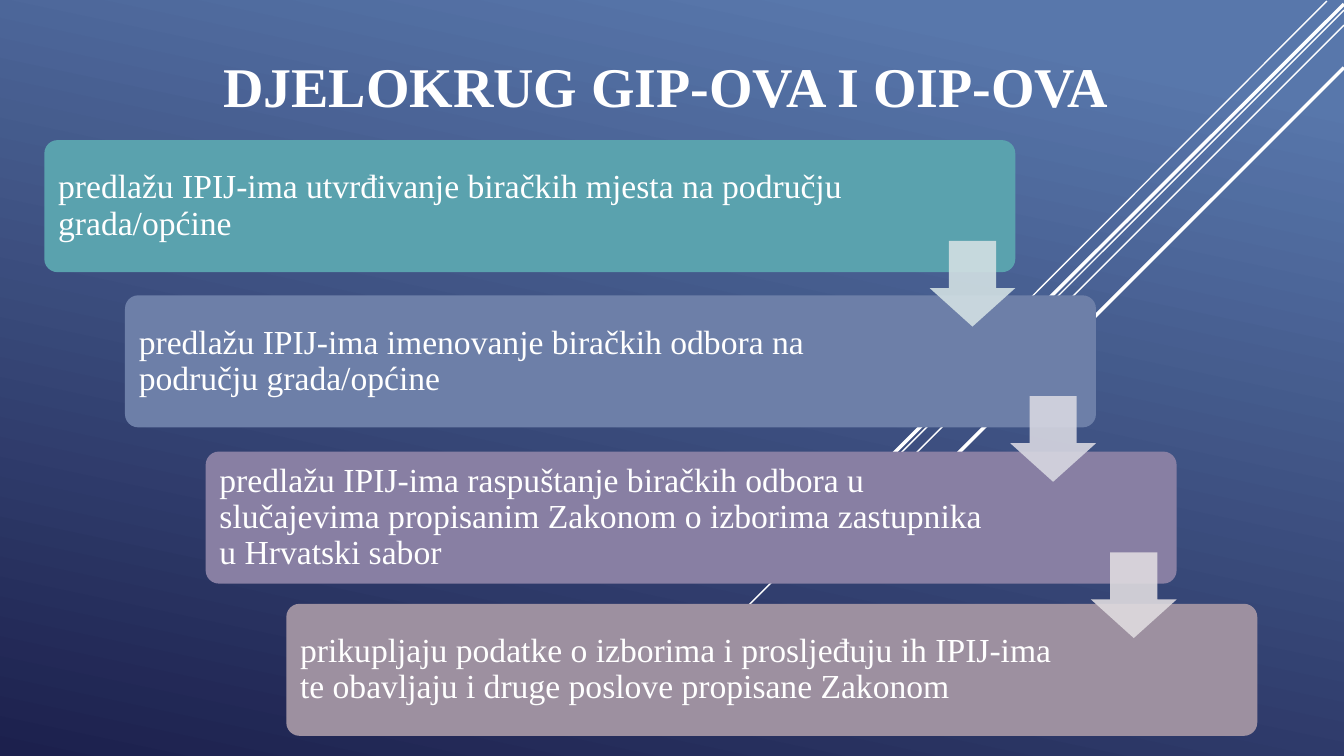
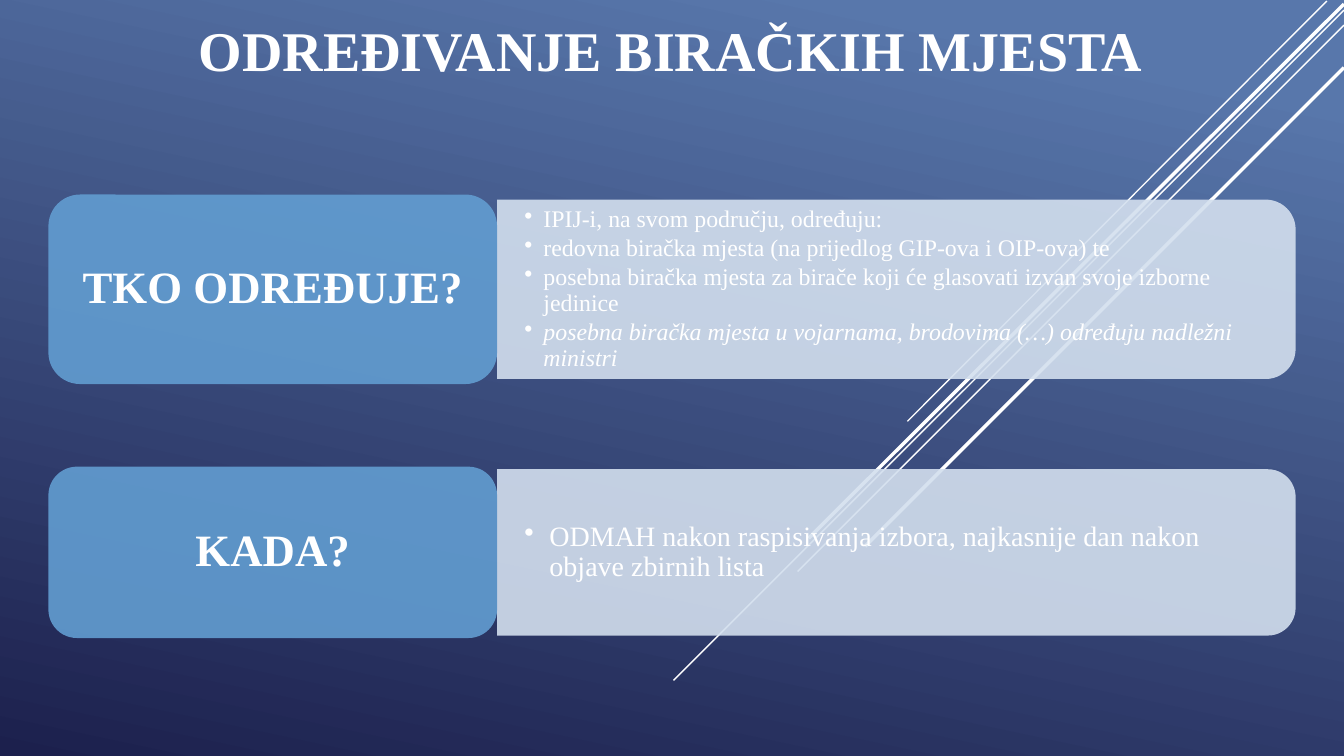
from lxml import etree
from pptx import Presentation
from pptx.dml.color import RGBColor
from pptx.enum import shapes, text
from pptx.oxml import ns
from pptx.util import Inches, Pt

# Shared style
FONT = "Times New Roman"
WHITE, SKY, NIGHT = "FFFFFF", "5877AB", "1C204D"
CARD, PANEL = "629DD1", "D3DFEE"
ALPHA = 90

# Diagonal lines: from x, from y, to x, to y, width
RAYS = [
    (13.16, 0.01, 9, 4.18, 1),
    (13.33, 0.1, 6.68, 6.75, 1),
    (13.33, 0.25, 7.91, 5.67, 1),
    (13.33, 0.04, 8.02, 5.34, 2.5),
    (13.33, 0.67, 8.58, 5.42, 2.5),
]

# Slide 1: text, top, right margin, fill, fill of the arrow to the next step
SCOPE_TITLE = "DJELOKRUG GIP-OVA I OIP-OVA"
STEPS = [
    ("predlažu IPIJ-ima utvrđivanje biračkih mjesta na području grada/općine",
     1.39, 1.58, "5AA2AE", "D2E0E3"),
    ("predlažu IPIJ-ima imenovanje biračkih odbora na području grada/općine",
     2.93, 1.79, "6D7FA8", "D7D7E1"),
    ("predlažu IPIJ-ima raspuštanje biračkih odbora u slučajevima propisanim "
     "Zakonom o izborima zastupnika u Hrvatski sabor",
     4.48, 1.78, "887FA3", "DFDBDF"),
    ("prikupljaju podatke o izborima i prosljeđuju ih IPIJ-ima te obavljaju "
     "i druge poslove propisane Zakonom",
     5.99, 1.79, "9D90A0", None),
]
STEP_LEFT, STEP_SHIFT, STEP_W, STEP_H = 0.44, 0.8, 9.63, 1.31
ARROW, ARROW_DROP = 0.85, 1.0

# Slide 2: question, top, card height, panel height, size, indent, answers (text, italic)
PLACES_TITLE = "ODREĐIVANJE BIRAČKIH MJESTA"
QUESTIONS = [
    ("TKO ODREĐUJE?", 1.93, 1.88, 1.78, 17, 0.19, [
        ("IPIJ-i, na svom području, određuju:", False),
        ("redovna biračka mjesta (na prijedlog GIP-ova i OIP-ova) te", False),
        ("posebna biračka mjesta za birače koji će glasovati izvan svoje "
         "izborne jedinice", False),
        ("posebna biračka mjesta u vojarnama, brodovima (…) određuju "
         "nadležni ministri", True),
    ]),
    ("KADA?", 4.63, 1.7, 1.65, 20, 0.25, [
        ("ODMAH nakon raspisivanja izbora, najkasnije dan nakon objave "
         "zbirnih lista", False),
    ]),
]
CARD_LEFT, CARD_W, PANEL_W, ANSWER_W = 0.48, 4.45, 7.92, 7.84


def rgb(value):
    return RGBColor.from_string(value)


def add_block(slide, kind, left, top, width, height, fill, alpha=None):
    block = slide.shapes.add_shape(
        kind, Inches(left), Inches(top), Inches(width), Inches(height))
    block.shadow.inherit = False
    block.line.fill.background()
    block.fill.solid()
    block.fill.fore_color.rgb = rgb(fill)
    if alpha:
        colour = block._element.spPr.find(".//" + ns.qn("a:srgbClr"))
        etree.SubElement(colour, ns.qn("a:alpha")).set("val", str(alpha * 1000))
    return block


def set_frame(frame, anchor, left, top, right, bottom):
    frame.word_wrap = True
    frame.auto_size = text.MSO_AUTO_SIZE.NONE
    frame.vertical_anchor = anchor
    frame.margin_left, frame.margin_top = Inches(left), Inches(top)
    frame.margin_right, frame.margin_bottom = Inches(right), Inches(bottom)


def format_paragraph(paragraph, size, align, bold=False, italic=False,
                     spacing=0.9, after=0):
    paragraph.alignment = align
    paragraph.line_spacing = spacing
    paragraph.space_after = Pt(after)
    for run in paragraph.runs:
        font = run.font
        font.name, font.size = FONT, Pt(size)
        font.bold, font.italic = bold, italic
        font.color.rgb = rgb(WHITE)


def add_bullet(paragraph, indent):
    props = paragraph._p.get_or_add_pPr()
    props.set("marL", str(Inches(indent)))
    props.set("indent", str(-Inches(indent)))
    etree.SubElement(props, ns.qn("a:buChar")).set("char", "•")


def add_titled_slide(deck, title, left, top, width, height):
    slide = deck.slides.add_slide(deck.slide_layouts[5])
    heading = slide.shapes.title
    heading.left, heading.top = Inches(left), Inches(top)
    heading.width, heading.height = Inches(width), Inches(height)
    heading.text_frame.text = title
    set_frame(heading.text_frame, text.MSO_ANCHOR.BOTTOM, 0.1, 0.05, 0.1, 0.05)
    format_paragraph(heading.text_frame.paragraphs[0], 40, text.PP_ALIGN.CENTER,
                     bold=True, spacing=1.0)
    return slide


def dress_master(deck, slide):
    """Gradient and diagonal lines; the lines are drawn on a slide, then moved."""
    master = deck.slide_master
    fill = master.background.fill
    fill.gradient()
    fill.gradient_angle = 258
    for stop, colour, place in zip(fill.gradient_stops, (SKY, NIGHT), (0.1, 1)):
        stop.color.rgb = rgb(colour)
        stop.position = place
    for x1, y1, x2, y2, weight in RAYS:
        ray = slide.shapes.add_connector(
            shapes.MSO_CONNECTOR.STRAIGHT,
            Inches(x1), Inches(y1), Inches(x2), Inches(y2))
        ray.line.color.rgb = rgb(WHITE)
        ray.line.width = Pt(weight)
        etree.SubElement(ray._element.spPr, ns.qn("a:effectLst"))
        master.shapes._spTree.append(ray._element)


def fill_scope(slide):
    # Staggered steps
    for i, (duty, top, right_margin, fill, _) in enumerate(STEPS):
        step = add_block(slide, shapes.MSO_SHAPE.ROUNDED_RECTANGLE,
                         STEP_LEFT + i * STEP_SHIFT, top, STEP_W, STEP_H, fill)
        step.adjustments[0] = 0.1
        step.text_frame.text = duty
        set_frame(step.text_frame, text.MSO_ANCHOR.MIDDLE,
                  0.1, 0.1, right_margin, 0.1)
        format_paragraph(step.text_frame.paragraphs[0], 24, text.PP_ALIGN.LEFT)
    # Arrows between steps, flush with the right edge of the upper one
    for i, (_, top, _, _, fill) in enumerate(STEPS[:-1]):
        right = STEP_LEFT + i * STEP_SHIFT + STEP_W
        arrow = add_block(slide, shapes.MSO_SHAPE.DOWN_ARROW, right - ARROW,
                          top + ARROW_DROP, ARROW, ARROW, fill, ALPHA)
        arrow.adjustments[0], arrow.adjustments[1] = 0.55, 0.45


def fill_places(slide):
    panel_left = CARD_LEFT + CARD_W
    for question, top, card_h, panel_h, size, indent, answers in QUESTIONS:
        middle = top + card_h / 2
        # Panel: an upright shape turned a quarter
        panel = add_block(slide, shapes.MSO_SHAPE.ROUND_2_SAME_RECTANGLE,
                          panel_left + (PANEL_W - panel_h) / 2,
                          middle - PANEL_W / 2, panel_h, PANEL_W, PANEL, ALPHA)
        panel.rotation = 90
        # Answers
        answer_box = slide.shapes.add_textbox(
            Inches(panel_left), Inches(middle - panel_h / 2),
            Inches(ANSWER_W), Inches(panel_h))
        frame = answer_box.text_frame
        frame.text = "\n".join(answer for answer, _ in answers)
        set_frame(frame, text.MSO_ANCHOR.MIDDLE, 0.27, 0.07, 0.27, 0.07)
        for paragraph, (_, italic) in zip(frame.paragraphs, answers):
            format_paragraph(paragraph, size, text.PP_ALIGN.LEFT,
                             italic=italic, after=2.5)
            add_bullet(paragraph, indent)
        # Question card
        card = add_block(slide, shapes.MSO_SHAPE.ROUNDED_RECTANGLE,
                         CARD_LEFT, top, CARD_W, card_h, CARD, ALPHA)
        card.text_frame.text = question
        set_frame(card.text_frame, text.MSO_ANCHOR.MIDDLE, 0.2, 0.15, 0.2, 0.15)
        format_paragraph(card.text_frame.paragraphs[0], 32,
                         text.PP_ALIGN.CENTER, bold=True)


def main():
    deck = Presentation()
    deck.slide_width, deck.slide_height = Inches(13.33), Inches(7.5)
    scope = add_titled_slide(deck, SCOPE_TITLE, 0, 0.14, 13.21, 1.09)
    dress_master(deck, scope)
    fill_scope(scope)
    fill_places(add_titled_slide(deck, PLACES_TITLE, 0.12, 0.23, 13.06, 0.64))
    deck.save("out.pptx")


if __name__ == "__main__":
    main()
